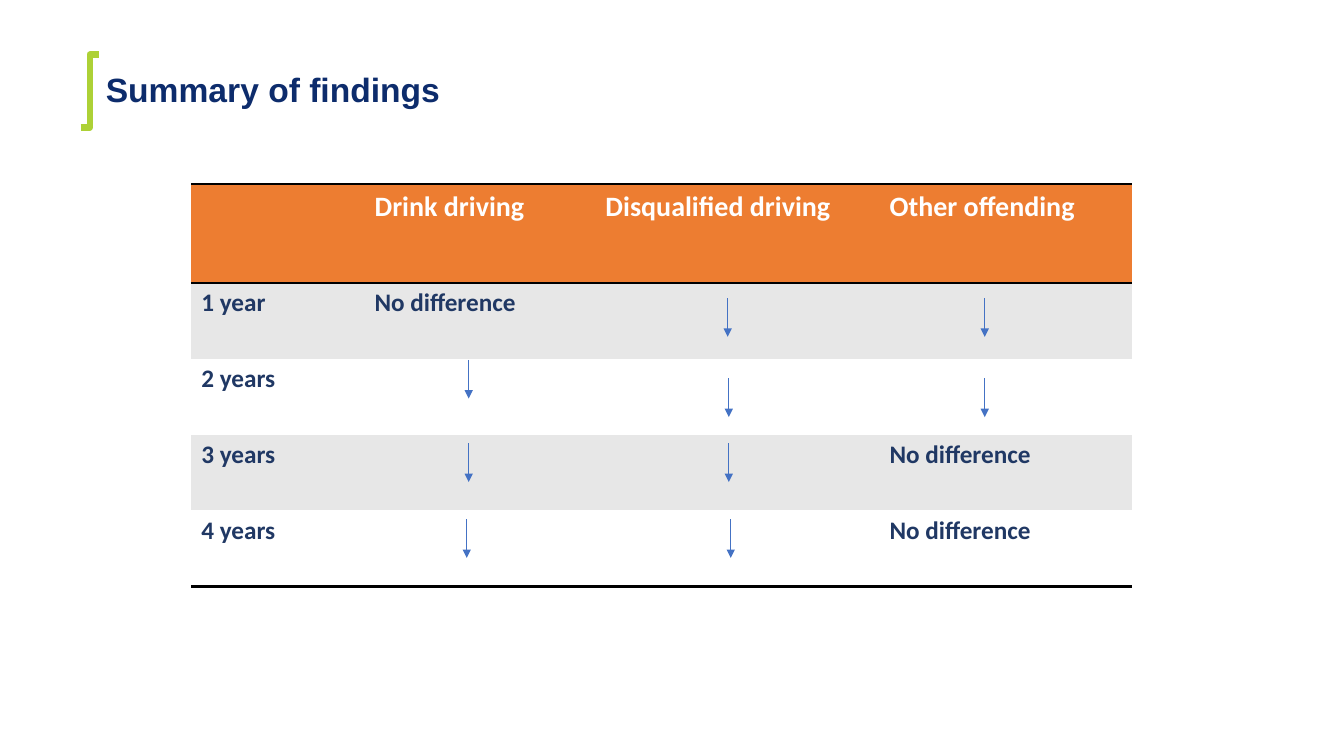
from lxml import etree
from pptx import Presentation
from pptx.dml.color import RGBColor
from pptx.enum import shapes, text
from pptx.oxml import ns
from pptx.util import Pt

GREEN = RGBColor(0xAD, 0xD1, 0x36)
NAVY = RGBColor(0x0D, 0x2C, 0x6C)
INK = RGBColor(0x20, 0x38, 0x64)
ORANGE = RGBColor(0xED, 0x7D, 0x31)
GREY = RGBColor(0xE7, 0xE7, 0xE7)
WHITE = RGBColor(0xFF, 0xFF, 0xFF)
BLACK = RGBColor(0, 0, 0)
BLUE = RGBColor(0x44, 0x72, 0xC4)

ROWS = [
    ["", "Drink driving", "Disqualified driving", "Other offending"],
    ["1 year", "No difference", "", ""],
    ["2 years", "", "", ""],
    ["3 years", "", "", "No difference"],
    ["4 years", "", "", "No difference"],
]
WIDTHS = [123.8, 164.9, 203, 180.3]
HEAD, ROW = 70.4, 54.2
PLAIN = "{2D5ABB26-0587-4C30-8999-92F81FD0307C}"

# Each arrow: horizontal place and top
ARROWS = [
    (334.8, 257), (334.8, 316.6), (333.4, 370.8),
    (519.8, 212.9), (520.6, 270.2), (520.6, 316.6), (522, 370.8),
    (703.4, 212.9), (703.4, 270.2),
]
LENGTH = 27.7


def style(font, color, **values):
    font.color.rgb = color
    for name, value in values.items():
        setattr(font, name, value)


def add_node(parent, tag, **values):
    return etree.SubElement(parent, ns.qn(tag), values)


def add_mark(slide):
    """Draw the open bracket beside the title."""
    form = slide.shapes.build_freeform(Pt(57.6), Pt(91), scale=1.0)
    points = [(64.2, 91), (64.2, 39), (70.8, 39)]
    form.add_line_segments([(Pt(x), Pt(y)) for x, y in points], close=False)
    mark = form.convert_to_shape()
    mark.shadow.inherit = False
    mark.fill.background()
    mark.line.color.rgb = GREEN
    mark.line.width = Pt(4.5)


def add_title(slide, words):
    title = slide.shapes.title
    place = {"left": 68.4, "top": 49, "width": 841, "height": 41.8}
    for name, value in place.items():
        setattr(title, name, Pt(value))
    frame = title.text_frame
    frame.text = words
    frame.vertical_anchor = text.MSO_ANCHOR.TOP
    line = frame.paragraphs[0]
    line.alignment = text.PP_ALIGN.LEFT
    line.line_spacing = 0.9
    style(line.font, NAVY, name="Arial", size=Pt(24), bold=True)


def add_edge(cell, tag):
    edge = add_node(cell._tc.get_or_add_tcPr(), tag, w=str(Pt(2)))
    fill = add_node(edge, "a:solidFill")
    add_node(fill, "a:srgbClr", val=str(BLACK))


def fill_cell(cell, words, row):
    head = row == 0
    if head:
        add_edge(cell, "a:lnT")
    if row in (0, len(ROWS) - 1):
        add_edge(cell, "a:lnB")
    cell.fill.solid()
    cell.fill.fore_color.rgb = ORANGE if head else GREY if row % 2 else WHITE
    cell.text = words
    style(cell.text_frame.paragraphs[0].font, WHITE if head else INK,
          name="Calibri", size=Pt(20 if head else 18), bold=True)


def add_grid(slide):
    high = HEAD + ROW * (len(ROWS) - 1)
    frame = slide.shapes.add_table(len(ROWS), len(WIDTHS), Pt(136.6),
                                   Pt(131.6), Pt(sum(WIDTHS)), Pt(high))
    grid = frame.table
    grid._tbl.tblPr.find(ns.qn("a:tableStyleId")).text = PLAIN
    for column, width in zip(grid.columns, WIDTHS):
        column.width = Pt(width)
    for i, words in enumerate(ROWS):
        grid.rows[i].height = Pt(ROW if i else HEAD)
        for j, word in enumerate(words):
            fill_cell(grid.cell(i, j), word, i)


def add_arrow(slide, x, top):
    arrow = slide.shapes.add_connector(
        shapes.MSO_CONNECTOR.STRAIGHT, Pt(x), Pt(top), Pt(x), Pt(top + LENGTH))
    arrow.line.color.rgb = BLUE
    arrow.line.width = Pt(0.5)
    add_node(arrow.line._get_or_add_ln(), "a:tailEnd", type="triangle")
    add_node(arrow._element.spPr, "a:effectLst")


def main():
    deck = Presentation()
    deck.slide_width, deck.slide_height = Pt(960), Pt(540)
    slide = deck.slides.add_slide(deck.slide_layouts[5])
    add_mark(slide)
    add_title(slide, "Summary of findings")
    add_grid(slide)
    for x, top in ARROWS:
        add_arrow(slide, x, top)
    deck.save("out.pptx")


if __name__ == "__main__":
    main()
